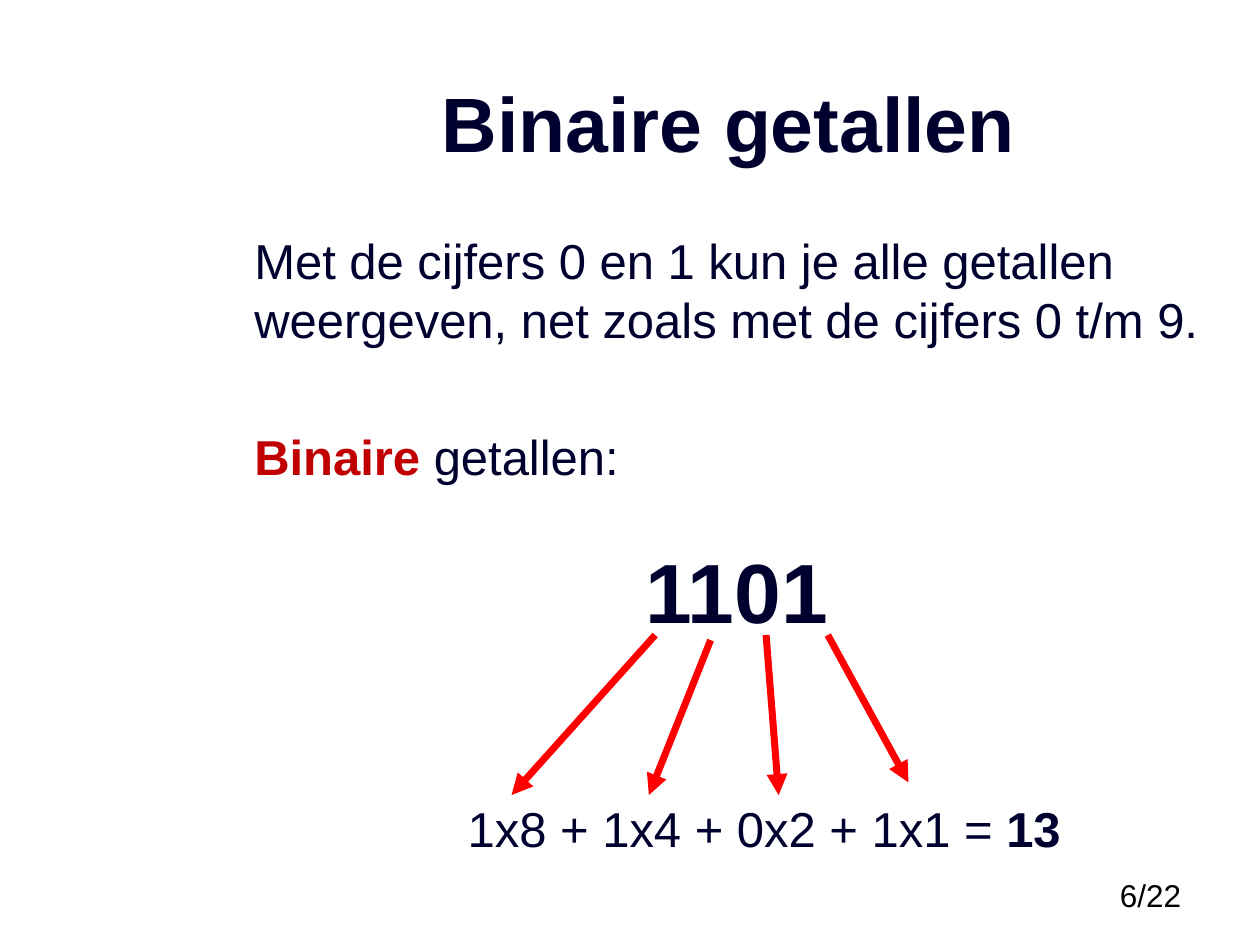
from pptx import Presentation
from pptx.dml.color import RGBColor
from pptx.enum.shapes import MSO_CONNECTOR
from pptx.enum.text import MSO_ANCHOR, PP_ALIGN
from pptx.util import Inches, Pt
from lxml.etree import SubElement
from pptx.oxml.ns import qn

NAVY = RGBColor(0x00, 0x00, 0x2E)
CRIMSON = RGBColor(0xC0, 0x00, 0x00)
RED = RGBColor(0xFF, 0x00, 0x00)
BLACK = RGBColor(0x00, 0x00, 0x00)

TITLE = "Binaire getallen"
PAGE = "6/22"
LEFT, CENTER = PP_ALIGN.LEFT, PP_ALIGN.CENTER
# (alignment, space before in points, left indent in inches, size, runs)
# each run is (text, bold, colour)
BODY = [
    (LEFT, 0, 0, 28, [("Met de cijfers 0 en 1 kun je alle getallen weergeven, "
                       "net zoals met de cijfers 0 t/m 9.", False, NAVY)]),
    (LEFT, 45, 0, 28, [("Binaire ", True, CRIMSON), ("getallen:", False, NAVY)]),
    (CENTER, 31, 0, 48, [("1101", True, NAVY)]),
    (CENTER, 90, 0.43, 28, [("1x8 + 1x4 + 0x2 + 1x1 = ", False, NAVY),
                            ("13", True, NAVY)]),
]
# from each binary digit to its term in the sum
ARROWS = [
    ((5.2, 5.04), (4.06, 6.31)),
    ((5.64, 5.08), (5.15, 6.31)),
    ((6.08, 5.04), (6.18, 6.31)),
    ((6.57, 5.04), (7.21, 6.21)),
]


def add_run(p, text, **font):
    r = p.add_run()
    r.text = text
    r.font.name = "Arial"
    r.font.color.rgb = font.pop("color")
    for name, value in font.items():
        setattr(r.font, name, value)


def add_text_box(s, *box):
    tf = s.shapes.add_textbox(*map(Inches, box)).text_frame
    tf.word_wrap = True
    return tf


def add_arrow(s, start, end):
    line = s.shapes.add_connector(MSO_CONNECTOR.STRAIGHT,
                                  *map(Inches, start + end))
    line.line.color.rgb = RED
    line.line.width = Pt(4)
    SubElement(line.line._get_or_add_ln(), qn("a:tailEnd"), type="triangle")
    SubElement(line._element.spPr, qn("a:effectLst"))


prs = Presentation()
prs.slide_width, prs.slide_height = Inches(10), Inches(7.5)
s = prs.slides.add_slide(prs.slide_layouts[5])

title = s.shapes.title
title.left, title.top, title.width, title.height = map(
    Inches, (1.95, 0.26, 7.67, 1.42))
tf = title.text_frame
tf.vertical_anchor = MSO_ANCHOR.MIDDLE
p = tf.paragraphs[0]
p.alignment = CENTER
add_run(p, TITLE, size=Pt(44), bold=True, color=NAVY)

tf = add_text_box(s, 1.92, 1.78, 7.86, 5.1)
for i, (align, before, indent, size, runs) in enumerate(BODY):
    p = tf.add_paragraph() if i else tf.paragraphs[0]
    p.alignment = align
    p.space_before = Pt(before)
    if indent:
        p._p.get_or_add_pPr().set("marL", str(Inches(indent)))
    for text, bold, color in runs:
        add_run(p, text, size=Pt(size), bold=bold, color=color)

for start, end in ARROWS:
    add_arrow(s, start, end)

tf = add_text_box(s, 8.79, 6.9, 1.21, 0.4)
add_run(tf.paragraphs[0], PAGE, size=Pt(18), color=BLACK)

prs.save("out.pptx")
